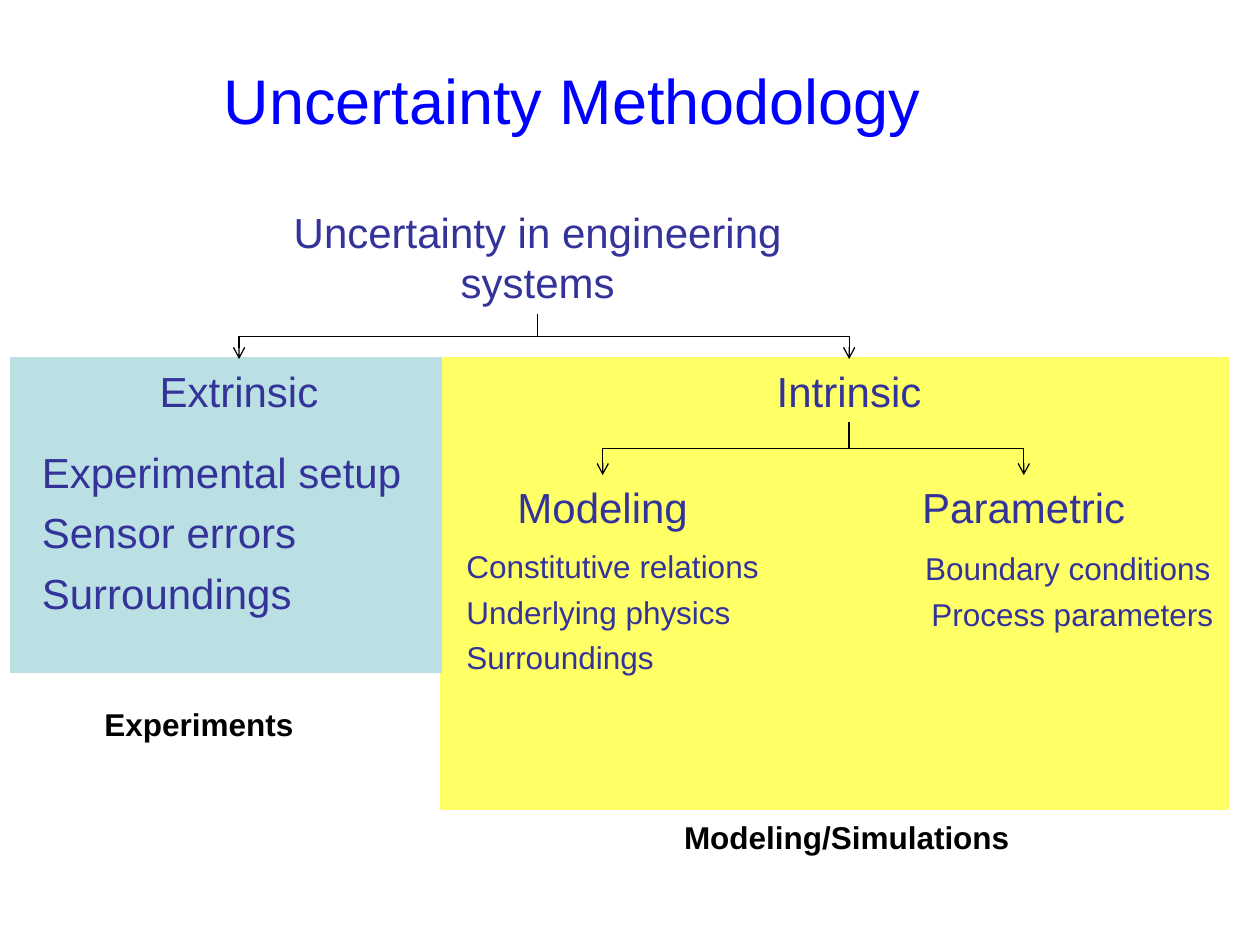
import dataclasses

import pptx
import pptx.dml.color
import pptx.enum.shapes
import pptx.enum.text
import pptx.oxml
import pptx.oxml.ns
import pptx.util

Pt = pptx.util.Pt
Align = pptx.enum.text.PP_ALIGN


@dataclasses.dataclass(frozen=True)
class Theme:
    """Colours and type sizes of the slide."""
    font: str = "Arial"
    title: str = "0000FF"
    text: str = "333399"
    black: str = "000000"
    extrinsic: str = "BBE0E3"
    intrinsic: str = "FFFF66"
    title_size: float = 36
    heading_size: float = 24
    body_size: float = 18


THEME = Theme()


def rgb(value):
    """Turn a hex string into a colour."""
    return pptx.dml.color.RGBColor.from_string(value)


def add_text(slide, box, lines, size, color=THEME.text, align=Align.CENTER,
             bold=False, margins=(7.2, 3.6), indents=None, wrap=True, middle=False):
    """Add a text box with one paragraph per line."""
    frame = slide.shapes.add_textbox(*map(Pt, box)).text_frame
    frame.word_wrap = wrap
    frame.margin_left = frame.margin_right = Pt(margins[0])
    frame.margin_top = frame.margin_bottom = Pt(margins[1])
    if middle:
        frame.vertical_anchor = pptx.enum.text.MSO_ANCHOR.MIDDLE
    for index, line in enumerate(lines):
        paragraph = frame.paragraphs[0] if index == 0 else frame.add_paragraph()
        paragraph.text = line
        paragraph.alignment = align
        if index:
            paragraph.space_before = Pt(round(size * 0.25, 2))
        if indents:
            properties = paragraph._p.get_or_add_pPr()
            properties.set("marL", str(Pt(indents[index])))
            properties.set("indent", "0")
        font = paragraph.font
        font.name, font.size, font.bold = THEME.font, Pt(size), bold
        font.color.rgb = rgb(color)


def add_list(slide, box, lines, size, indents, align=Align.LEFT):
    """Add an indented list without inner margins."""
    add_text(slide, box, lines, size, align=align, margins=(0, 0), indents=indents)


def add_heading(slide, center, top, width, text, height=36):
    """Add a heading centred on a given horizontal position."""
    add_text(slide, (center - width / 2, top, width, height), [text], THEME.heading_size)


def add_caption(slide, box, text):
    """Add a bold caption below a panel."""
    add_text(slide, box, [text], THEME.body_size, THEME.black, Align.LEFT, True, wrap=False)


def add_panel(slide, box, color):
    """Add a plain coloured rectangle."""
    shape = slide.shapes.add_shape(
        pptx.enum.shapes.MSO_SHAPE.RECTANGLE, *map(Pt, box))
    shape.shadow.inherit = False
    shape.fill.solid()
    shape.fill.fore_color.rgb = shape.line.color.rgb = rgb(color)
    shape.line.width = Pt(0.75)


def add_branch(slide, start, end):
    """Add an elbow arrow that leaves downwards and turns halfway."""
    (left, top), (right, bottom) = start, end
    center, middle = (left + right) / 2, (top + bottom) / 2
    half_width, half_height = (bottom - top) / 2, abs(right - left) / 2
    connector = slide.shapes.add_connector(
        pptx.enum.shapes.MSO_CONNECTOR.ELBOW,
        Pt(center - half_width), Pt(middle - half_height),
        Pt(center + half_width), Pt(middle + half_height))
    connector.line.color.rgb = rgb(THEME.black)
    connector.line.width = Pt(0.75)
    properties = connector._element.spPr
    goes_right = right > left
    properties.xfrm.set("rot", str((270 if goes_right else 90) * 60000))
    if goes_right:
        properties.xfrm.set("flipH", "1")
    name = pptx.oxml.ns.qn
    tail = connector.line._get_or_add_ln().makeelement(name("a:tailEnd"), {"type": "arrow"})
    connector.line._get_or_add_ln().append(tail)
    properties.append(properties.makeelement(name("a:effectLst"), {}))


def add_tree(slide, start, ends):
    """Add one branch from a parent to each child."""
    for end in ends:
        add_branch(slide, start, end)


def add_extrinsic(slide, box):
    """Add the experiments region."""
    left, top, width, height = box
    add_panel(slide, box, THEME.extrinsic)
    add_heading(slide, left + 130.8, top + 0.7, 124.6, "Extrinsic")
    add_list(slide, (left + 2.8, top + 50.4, 264, 98),
             ["Experimental setup", "Sensor errors", "Surroundings"],
             THEME.heading_size, [15.3] * 3)
    add_caption(slide, (left + 46.8, top + height + 15, 122.4, 29), "Experiments")


def add_intrinsic(slide, box):
    """Add the modeling and simulations region."""
    left, top, width, height = box
    parent, modeling, parametric = left + 233.2, left + 92.4, left + 333
    add_panel(slide, box, THEME.intrinsic)
    add_heading(slide, parent, top + 0.7, 139, "Intrinsic")
    add_heading(slide, modeling, top + 67, 156.2, "Modeling")
    add_heading(slide, parametric, top + 67, 131, "Parametric")
    add_tree(slide, (parent, top + 36.7), [(modeling, top + 67), (parametric, top + 67)])
    add_list(slide, (left + 5.8, top + 108, 264, 73.4),
             ["Constitutive relations", "Underlying physics", "Surroundings"],
             THEME.body_size, [8.64] * 3)
    add_list(slide, (left + 234, top + 109.5, 239.8, 47.5),
             ["Boundary conditions", "Process parameters"],
             THEME.body_size, [8.64, 13.64], Align.CENTER)
    add_caption(slide, (left + 131.8, top + height + 1.4, 200.2, 29), "Modeling/Simulations")


def add_header(slide, box):
    """Add the slide title."""
    add_text(slide, box, ["Uncertainty Methodology"], THEME.title_size, THEME.title, middle=True)


def main():
    """Build and save the slide."""
    presentation = pptx.Presentation()
    presentation.slide_width, presentation.slide_height = Pt(720), Pt(540)
    slide = presentation.slides.add_slide(presentation.slide_layouts[6])
    add_header(slide, (113.8, 14.4, 426.2, 85))
    add_intrinsic(slide, (252, 204.5, 450, 257.8))
    add_extrinsic(slide, (5.8, 204.5, 246.2, 180))
    add_heading(slide, 307.2, 114.5, 310.3, "Uncertainty in engineering systems", 64.8)
    add_tree(slide, (307.2, 179.3), [(136.6, 205.2), (485.2, 205.2)])
    presentation.save("out.pptx")


if __name__ == "__main__":
    main()
